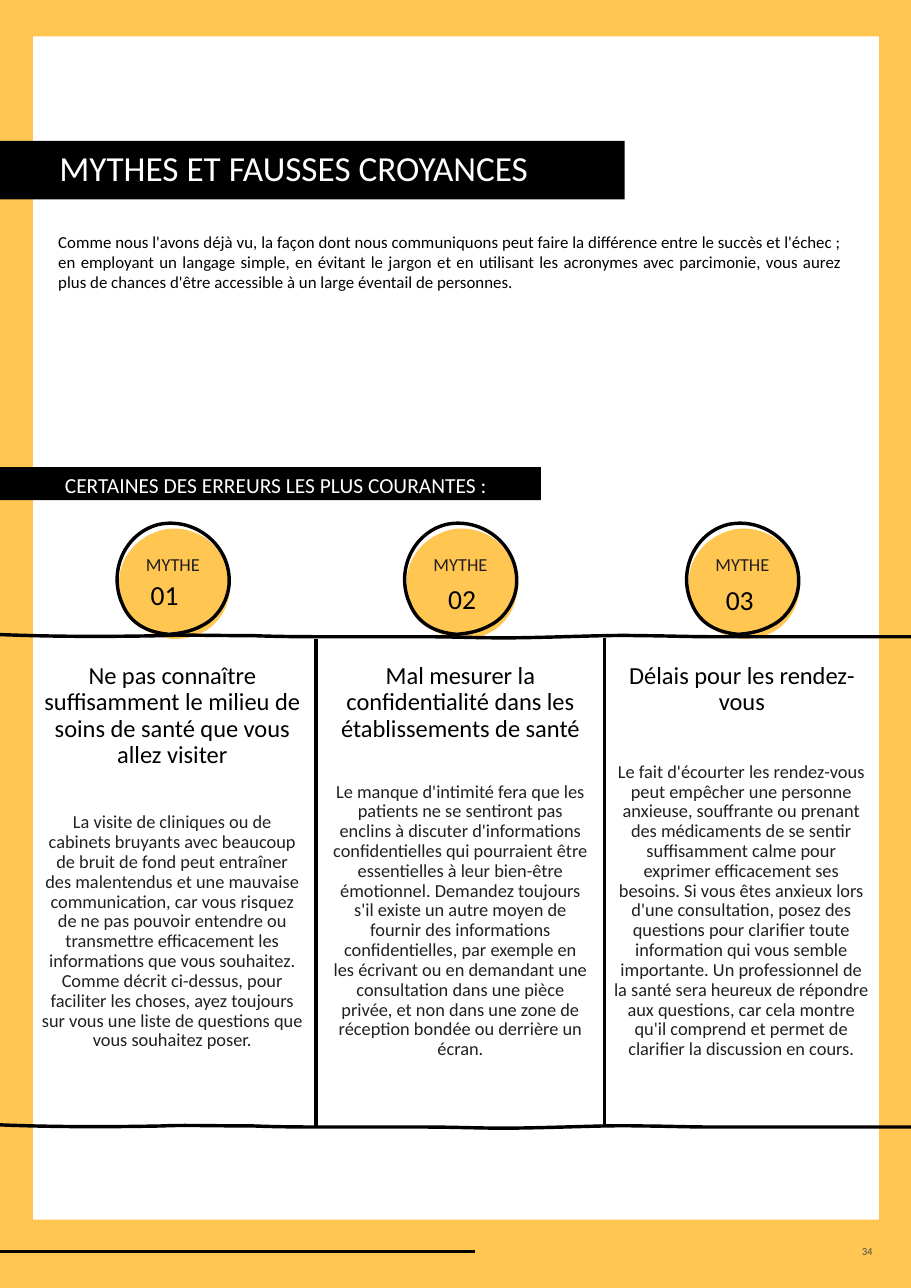
from dataclasses import dataclass
from typing import NamedTuple

from lxml.etree import SubElement
from pptx import Presentation
from pptx.dml.color import RGBColor
from pptx.enum.shapes import MSO_CONNECTOR, MSO_SHAPE
from pptx.enum.text import MSO_ANCHOR, PP_ALIGN
from pptx.oxml.ns import qn
from pptx.util import Inches, Pt

COLORS = {"gold": "FFC652", "white": "FFFFFF", "black": "000000",
          "ink": "231F20", "gray": "4B4B4B"}
PAGE_WIDTH, PAGE_HEIGHT = 8.27, 11.69


class Box(NamedTuple):
    left: float
    top: float
    width: float
    height: float


class Style(NamedTuple):
    size: float
    color: str
    align: PP_ALIGN = PP_ALIGN.LEFT
    anchor: MSO_ANCHOR = MSO_ANCHOR.TOP
    spacing: float = 1.0
    indent: float = 0


@dataclass
class Myth:
    number: str
    title: str
    body: str
    title_box: Box
    body_box: Box
    badge_left: float
    number_at: tuple[float, float]


HEAD = Style(16, "black", PP_ALIGN.CENTER, spacing=0.9)
BODY = Style(12, "ink", PP_ALIGN.CENTER, spacing=0.9)
LABEL = Style(12, "ink", PP_ALIGN.CENTER, MSO_ANCHOR.MIDDLE, 0.9)
NUMBER = Style(18, "black")

MYTHS = [
    Myth("01", "Ne pas connaître suffisamment le milieu de soins de santé que vous allez visiter",
         "La visite de cliniques ou de cabinets bruyants avec beaucoup de bruit de fond peut "
         "entraîner des malentendus et une mauvaise communication, car vous risquez de ne pas "
         "pouvoir entendre ou transmettre efficacement les informations que vous souhaitez. "
         "Comme décrit ci-dessus, pour faciliter les choses, ayez toujours sur vous une liste "
         "de questions que vous souhaitez poser.",
         Box(0.28, 5.97, 2.57, 0.46), Box(0.28, 7.33, 2.57, 2.76), 1.06, (1.27, 5.2)),
    Myth("02", "Mal mesurer la confidentialité dans les établissements de santé",
         "Le manque d'intimité fera que les patients ne se sentiront pas enclins à discuter "
         "d'informations confidentielles qui pourraient être essentielles à leur bien-être "
         "émotionnel. Demandez toujours s'il existe un autre moyen de fournir des informations "
         "confidentielles, par exemple en les écrivant ou en demandant une consultation dans "
         "une pièce privée, et non dans une zone de réception bondée ou derrière un écran.",
         Box(2.88, 5.97, 2.6, 0.46), Box(2.92, 7.05, 2.52, 3.04), 3.67, (3.97, 5.23)),
    Myth("03", "Délais pour les rendez-vous",
         "Le fait d'écourter les rendez-vous peut empêcher une personne anxieuse, souffrante ou "
         "prenant des médicaments de se sentir suffisamment calme pour exprimer efficacement "
         "ses besoins. Si vous êtes anxieux lors d'une consultation, posez des questions pour "
         "clarifier toute information qui vous semble importante. Un professionnel de la santé "
         "sera heureux de répondre aux questions, car cela montre qu'il comprend et permet de "
         "clarifier la discussion en cours.",
         Box(5.51, 5.97, 2.45, 0.46), Box(5.47, 6.87, 2.52, 3.67), 6.23, (6.49, 5.24)),
]

# Each curve is a start point followed by Bézier triples: two controls and an end.
DISC = [(0.17, 0.88), (0.26, 0.97), (0.38, 1.01), (0.5, 1.03), (0.59, 1.03), (0.69, 1.02),
        (0.78, 0.97), (0.94, 0.89), (1.04, 0.7), (1.03, 0.52), (1.03, 0.36), (0.93, 0.2),
        (0.8, 0.11), (0.66, 0.02), (0.48, 0), (0.33, 0.07), (0.18, 0.13), (0.06, 0.27),
        (0.03, 0.43), (0, 0.59), (0.05, 0.77), (0.17, 0.88)]
RING = [(0.39, 1.01), (0.53, 1.01), (0.67, 0.99), (0.79, 0.92), (0.92, 0.85), (1.01, 0.7),
        (1.02, 0.55), (1.04, 0.2), (0.71, -0.06), (0.38, 0.01), (0.07, 0.09), (-0.08, 0.44),
        (0.05, 0.73), (0.13, 0.93), (0.31, 1), (0.51, 1.01)]
WAVE = [(0, 0), (0.49, 0.02), (0.98, 0.02), (1.47, 0.01), (1.67, 0), (1.92, 0.01),
        (2.3, 0.01), (2.55, 0.02), (2.79, 0.02), (3.04, 0.02), (3.23, 0.02), (3.63, 0.02),
        (3.86, 0.02), (4.1, 0.02), (4.34, 0.03), (4.57, 0.03), (4.97, 0.03), (5.55, 0),
        (5.78, 0.01), (6.01, 0.01), (6.24, 0.02), (6.48, 0.02), (6.67, 0.02), (7.4, 0.02),
        (7.46, 0.02), (7.68, 0.02), (7.9, 0.02), (8.12, 0.02), (8.17, 0.02), (8.22, 0.02),
        (8.27, 0.02)]

deck = Presentation()
deck.slide_width, deck.slide_height = Inches(PAGE_WIDTH), Inches(PAGE_HEIGHT)
slide = deck.slides.add_slide(deck.slide_layouts[6])
shapes = slide.shapes


def rgb(name: str) -> RGBColor:
    return RGBColor.from_string(COLORS[name])


def write(shape, text: str, style: Style) -> None:
    frame = shape.text_frame
    frame.word_wrap = True
    frame.vertical_anchor = style.anchor
    frame.text = text
    para = frame.paragraphs[0]
    para.alignment = style.align
    para.line_spacing = style.spacing
    if style.indent:
        para._p.get_or_add_pPr().set("marL", str(Inches(style.indent)))
    font = para.runs[0].font
    font.name, font.size = "Calibri", Pt(style.size)
    font.color.rgb = rgb(style.color)


def add_text(parent, box: Box, text: str, style: Style) -> None:
    write(parent.add_textbox(*map(Inches, box)), text, style)


def add_rect(box: Box, color: str):
    rect = shapes.add_shape(MSO_SHAPE.RECTANGLE, *map(Inches, box))
    rect.shadow.inherit = False
    rect.fill.solid()
    rect.fill.fore_color.rgb = rgb(color)
    rect.line.fill.background()
    return rect


def add_line(x1: float, y1: float, x2: float, y2: float, weight: float) -> None:
    line = shapes.add_connector(MSO_CONNECTOR.STRAIGHT, *map(Inches, (x1, y1, x2, y2)))
    line.line.color.rgb = rgb("black")
    line.line.width = Pt(weight)
    SubElement(line._element.spPr, qn("a:effectLst"))


def add_curve(parent, curve: list, box: Box, fill: str = "") -> None:
    """Draw a filled outline, or an open black stroke when no fill is given."""
    pen = parent.build_freeform(Inches(box.left), Inches(box.top))
    corner = Inches(box.left + box.width), Inches(box.top + box.height)
    pen.add_line_segments([corner], close=False)
    form = pen.convert_to_shape()
    route = form._element.spPr.find(".//" + qn("a:path"))
    for step in list(route):
        route.remove(step)
    steps = [("a:moveTo", curve[:1])]
    steps += [("a:cubicBezTo", curve[i:i + 3]) for i in range(1, len(curve), 3)]
    for tag, points in steps:
        step = SubElement(route, qn(tag))
        for x, y in points:
            SubElement(step, qn("a:pt"), x=str(Inches(x)), y=str(Inches(y)))
    form.shadow.inherit = False
    if fill:
        SubElement(route, qn("a:close"))
        form.fill.solid()
        form.fill.fore_color.rgb = rgb(fill)
        form.line.fill.background()
    else:
        form.fill.background()
        form.line.color.rgb = rgb("black")
        form.line.width = Pt(2.25)


add_rect(Box(0, -0.02, PAGE_WIDTH, 11.71), "gold")
add_rect(Box(0.3, 0.33, 7.68, 10.74), "white")
add_line(0, 11.36, 4.31, 11.36, 1.5)
add_text(shapes, Box(6.94, 11.28, 1.08, 0.16), "34",
         Style(7, "gray", PP_ALIGN.RIGHT, MSO_ANCHOR.MIDDLE))

for myth in MYTHS:
    add_text(shapes, myth.body_box, myth.body, BODY)
    add_text(shapes, myth.title_box, myth.title, HEAD)
for x, y in ((2.87, 5.8), (5.49, 5.79)):
    add_line(x, y, x, y + 4.44, 2.25)
for myth in reversed(MYTHS):
    badge = shapes.add_group_shape().shapes
    add_curve(badge, DISC, Box(myth.badge_left, 4.77, 1.04, 1.03), "gold")
    add_text(badge, Box(myth.badge_left, 5.01, 1.02, 0.24), "MYTHE", LABEL)
    add_curve(badge, RING, Box(myth.badge_left, 4.75, 1.02, 1.01))
for y in (5.76, 10.21):
    add_curve(shapes, WAVE, Box(0, y, PAGE_WIDTH, 0.03))

add_text(shapes, Box(0.43, 2.05, 7.31, 0.87),
         "Comme nous l'avons déjà vu, la façon dont nous communiquons peut faire la différence "
         "entre le succès et l'échec ; en employant un langage simple, en évitant le jargon et "
         "en utilisant les acronymes avec parcimonie, vous aurez plus de chances d'être "
         "accessible à un large éventail de personnes.", Style(11, "black", PP_ALIGN.JUSTIFY))
write(add_rect(Box(-0.05, 1.28, 5.72, 0.53), "black"), "MYTHES ET FAUSSES CROYANCES",
      Style(23, "white", anchor=MSO_ANCHOR.MIDDLE, spacing=0.9, indent=0.49))
write(add_rect(Box(0, 4.24, 4.91, 0.3), "black"), "CERTAINES DES ERREURS LES PLUS COURANTES :",
      Style(14, "white", indent=0.49))
for myth in MYTHS:
    left, top = myth.number_at
    add_text(shapes, Box(left, top, min(4.17, PAGE_WIDTH - left), 0.4), myth.number, NUMBER)

deck.save("out.pptx")
